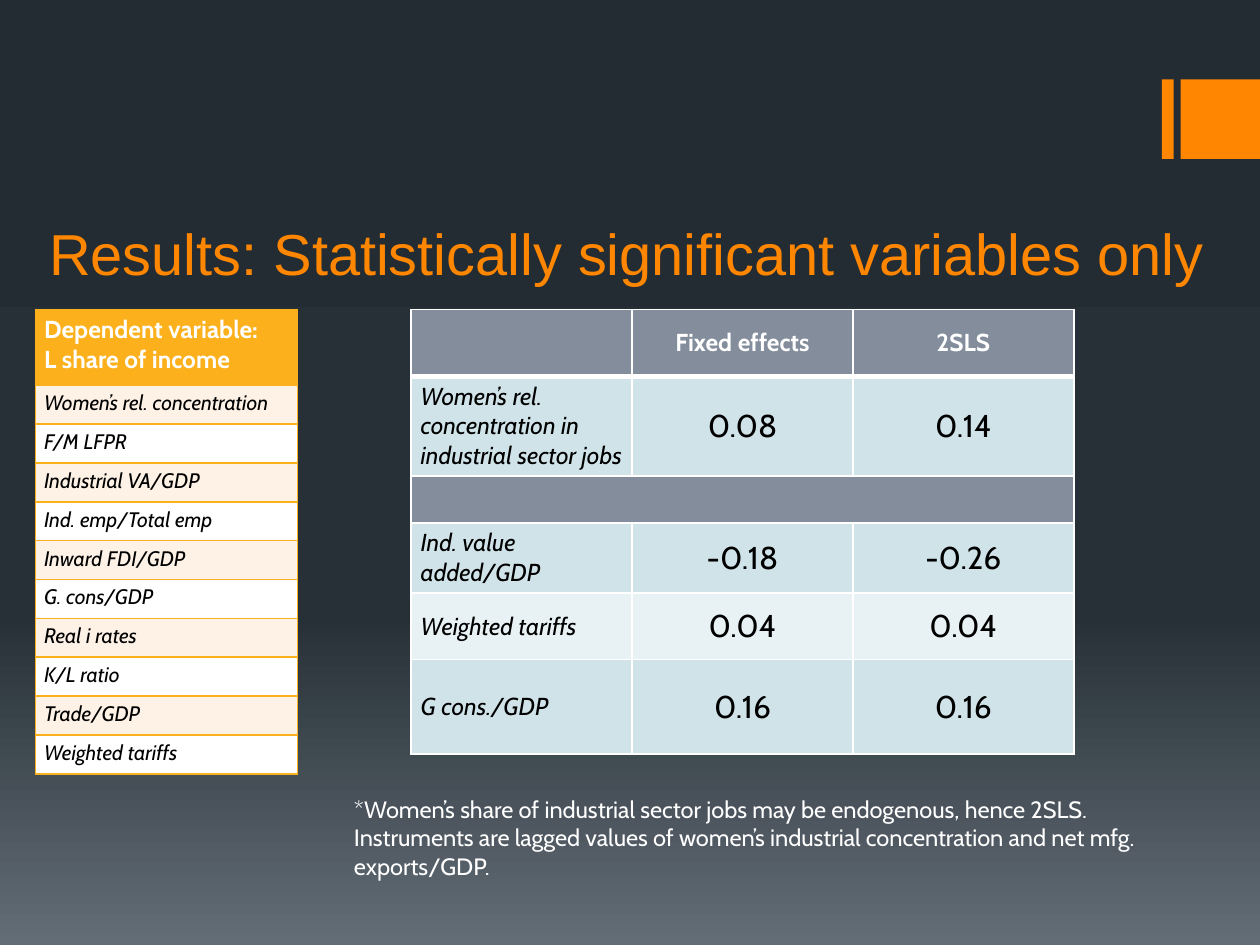
from copy import deepcopy

from lxml.etree import SubElement
from pptx import Presentation
from pptx.dml.color import RGBColor
from pptx.enum.shapes import MSO_SHAPE
from pptx.enum.text import MSO_ANCHOR, MSO_AUTO_SIZE, PP_ALIGN
from pptx.oxml.ns import qn
from pptx.util import Pt

ORANGE = RGBColor(0xFF, 0x86, 0x00)
AMBER = RGBColor(0xFC, 0xB1, 0x1C)
CREAM = RGBColor(0xFE, 0xF2, 0xE7)
WHITE = RGBColor(0xFF, 0xFF, 0xFF)
BLACK = RGBColor(0x00, 0x00, 0x00)
GRAY = RGBColor(0x83, 0x8D, 0x9B)
BLUE = RGBColor(0xCF, 0xE3, 0xE8)
PALE_BLUE = RGBColor(0xE8, 0xF2, 0xF4)
NIGHT = RGBColor(0x24, 0x2C, 0x33)
SLATE = RGBColor(0x27, 0x30, 0x37)
MIST = RGBColor(0x63, 0x6D, 0x76)

TITLE = {"name": "Arial", "size": Pt(33), "color": ORANGE}
HEADER = {"name": "Cabin", "size": Pt(14), "color": WHITE, "bold": True}
LABEL = {"name": "Cabin", "size": Pt(14), "color": BLACK, "italic": True}
VARIABLE = {**LABEL, "size": Pt(12)}
VALUE = {"name": "Cabin", "size": Pt(18), "color": BLACK}
NOTE = {"name": "Cabin", "size": Pt(13.5), "color": WHITE}

VARIABLES = [
    "Women’s rel. concentration", "F/M LFPR", "Industrial VA/GDP",
    "Ind. emp/Total emp", "Inward FDI/GDP", "G. cons/GDP", "Real i rates",
    "K/L ratio", "Trade/GDP", "Weighted tariffs",
]
RESULTS = [
    (38, GRAY, ["", "Fixed effects", "2SLS"]),
    (56, BLUE, ["Women’s rel. concentration in industrial sector jobs", "0.08", "0.14"]),
    (27, GRAY, ["", "", ""]),
    (40, BLUE, ["Ind. value added/GDP", "-0.18", "-0.26"]),
    (38, PALE_BLUE, ["Weighted tariffs", "0.04", "0.04"]),
    (54, BLUE, ["G cons./GDP", "0.16", "0.16"]),
]


def write_text(frame, text, style, alignment=PP_ALIGN.LEFT):
    frame.text = text
    for paragraph in frame.paragraphs:
        paragraph.alignment = alignment
        for run in paragraph.runs:
            for name, value in style.items():
                if name == "color":
                    run.font.color.rgb = value
                else:
                    setattr(run.font, name, value)


def set_background(slide):
    fill = slide.background.fill
    fill.gradient()
    fill.gradient_angle = 270
    stop_list = slide.background._cSld.find(".//" + qn("a:gsLst"))
    stop_list.append(deepcopy(stop_list[-1]))
    stops = [(0, NIGHT), (0.65, SLATE), (1, MIST)]
    for stop, (position, color) in zip(fill.gradient_stops, stops):
        stop.position = position
        stop.color.rgb = color


def add_block(slide, left, width):
    shape = slide.shapes.add_shape(
        MSO_SHAPE.RECTANGLE, Pt(left), Pt(45.4), Pt(width), Pt(45.4))
    shape.shadow.inherit = False
    shape.fill.solid()
    shape.fill.fore_color.rgb = ORANGE
    shape.line.fill.background()


def set_title(slide, text):
    title = slide.shapes.title
    geometry = {"left": 20.2, "top": 89.3, "width": 676, "height": 78.5}
    for name, value in geometry.items():
        setattr(title, name, Pt(value))
    frame = title.text_frame
    write_text(frame, text, TITLE, PP_ALIGN.CENTER)
    frame.vertical_anchor = MSO_ANCHOR.BOTTOM
    frame.margin_left = frame.margin_right = 0


def add_table(slide, left, widths, heights):
    table = slide.shapes.add_table(
        len(heights), len(widths), Pt(left), Pt(177),
        Pt(sum(widths)), Pt(sum(heights))).table
    table.first_row = table.horz_banding = False
    for column, width in zip(table.columns, widths):
        column.width = Pt(width)
    for row, height in zip(table.rows, heights):
        row.height = Pt(height)
    return table


def format_cell(cell, fill, border, margin, top_width=1, bottom_width=1):
    cell.fill.solid()
    cell.fill.fore_color.rgb = fill
    cell.margin_left = cell.margin_right = Pt(margin)
    cell.margin_top = cell.margin_bottom = Pt(2.9 if cell.text else 0)
    properties = cell._tc.get_or_add_tcPr()
    sides = [("L", 1), ("R", 1), ("T", top_width), ("B", bottom_width)]
    for index, (side, width) in enumerate(sides):
        line = SubElement(properties, qn(f"a:ln{side}"), w=str(Pt(width)))
        solid = SubElement(line, qn("a:solidFill"))
        SubElement(solid, qn("a:srgbClr"), val=str(border))
        properties.insert(index, line)


def add_variable_table(slide):
    texts = ["Dependent variable:\nL share of income"] + VARIABLES
    table = add_table(slide, 20.2, [149.8], [43.2] + [22.2] * len(VARIABLES))
    for index, text in enumerate(texts):
        cell = table.cell(index, 0)
        write_text(cell.text_frame, text, VARIABLE if index else HEADER)
        fill = (CREAM if index % 2 else WHITE) if index else AMBER
        format_cell(cell, fill, AMBER, 5)


def add_results_table(slide):
    table = add_table(slide, 235, [126.2] * 3, [height for height, _, _ in RESULTS])
    for row, (_, fill, texts) in enumerate(RESULTS):
        for column, text in enumerate(texts):
            cell = table.cell(row, column)
            style = HEADER if row == 0 else VALUE if column else LABEL
            alignment = PP_ALIGN.CENTER if column else PP_ALIGN.LEFT
            write_text(cell.text_frame, text, style, alignment)
            format_cell(cell, fill, WHITE, 5.4,
                        3 if row == 1 else 1, 3 if row == 0 else 1)
            cell.vertical_anchor = MSO_ANCHOR.MIDDLE
        if not any(texts):
            table.cell(row, 0).merge(table.cell(row, 2))


def add_note(slide, text):
    frame = slide.shapes.add_textbox(
        Pt(195.2), Pt(450.7), Pt(500.4), Pt(40.3)).text_frame
    frame.word_wrap = True
    frame.auto_size = MSO_AUTO_SIZE.SHAPE_TO_FIT_TEXT
    write_text(frame, text, NOTE)


def main():
    presentation = Presentation()
    presentation.slide_width = Pt(720)
    presentation.slide_height = Pt(540)
    slide = presentation.slides.add_slide(presentation.slide_layouts[5])
    set_background(slide)
    add_block(slide, 664, 6.7)
    add_block(slide, 674.7, 45.3)
    set_title(slide, "Results: Statistically significant variables only")
    add_results_table(slide)
    add_variable_table(slide)
    add_note(slide, "*Women’s share of industrial sector jobs may be endogenous, "
             "hence 2SLS. Instruments are lagged values of women’s industrial "
             "concentration and net mfg. exports/GDP.")
    presentation.save("out.pptx")


if __name__ == "__main__":
    main()
